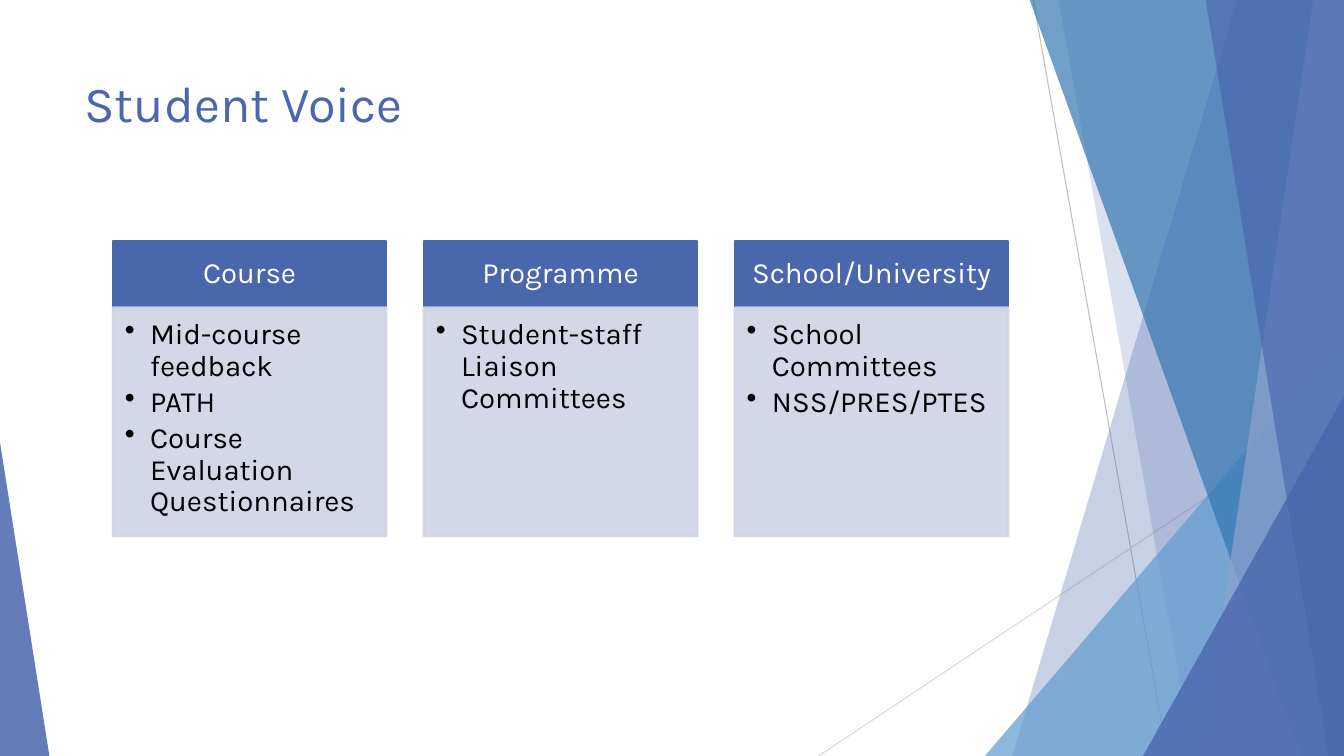
import pptx
import pptx.util
import pptx.dml.color
import pptx.enum.shapes
import pptx.enum.text
import pptx.oxml
import pptx.oxml.ns

Pt = pptx.util.Pt
RGBColor = pptx.dml.color.RGBColor
MSO_SHAPE = pptx.enum.shapes.MSO_SHAPE
PP_ALIGN = pptx.enum.text.PP_ALIGN
MSO_ANCHOR = pptx.enum.text.MSO_ANCHOR

BLUE = RGBColor(0x4A, 0x66, 0xAC)
SKY = RGBColor(0x62, 0x9D, 0xD1)
OCEAN = RGBColor(0x34, 0x77, 0xB2)
LAVENDER = RGBColor(0x90, 0xA2, 0xCF)
PANEL = RGBColor(0xD0, 0xD3, 0xE3)
GREY = RGBColor(0xBF, 0xBF, 0xBF)
PALE_GREY = RGBColor(0xD9, 0xD9, 0xD9)
WHITE = RGBColor(0xFF, 0xFF, 0xFF)
BLACK = RGBColor(0, 0, 0)

TITLE = "Student Voice"
CARDS = [
    ("Course", ["Mid-course feedback", "PATH", "Course Evaluation Questionnaires"]),
    ("Programme", ["Student-staff Liaison Committees"]),
    ("School/University", ["School Committees", "NSS/PRES/PTES"]),
]

WIDTH, HEIGHT, BAND_TOP = 960, 540, -0.7
HAIRLINES = [((738, 0), (834, HEIGHT), GREY), ((WIDTH, 290), (584.7, HEIGHT), PALE_GREY)]
DECORATION = [
    ("band", (884, 723), BLUE, 30),
    ("band", (756, 852), BLUE, 20),
    ("triangle", (703.5, 240, 256.5, 1), SKY, 72),
    ("band", (735.3, 929.5), OCEAN, 70),
    ("band", (938.2, 858.3), LAVENDER, 70),
    ("band", (861.1, 949), BLUE, 65),
    ("triangle", (816.5, 283, 143.5, 1), BLUE, 80),
    ("triangle", (0, 316, 35.3, 0), BLUE, 85),
]

FONT = "Karla"
CARD_LEFT, CARD_PITCH, CARD_WIDTH = 80.6, 222.1, 195.4
HEADER_TOP, HEADER_HEIGHT, BODY_HEIGHT = 172.1, 47.5, 163.4
HEADER_FORMAT = {"alignment": PP_ALIGN.CENTER, "line_spacing": 0.9}
BULLET_FORMAT = {"alignment": PP_ALIGN.LEFT, "line_spacing": 0.9, "space_after": Pt(3)}


def set_attributes(target, values):
    for name, value in values.items():
        setattr(target, name, value)


def set_opacity(color_format_owner, percent):
    for color in color_format_owner.iter(pptx.oxml.ns.qn("a:srgbClr")):
        alpha = color.makeelement(pptx.oxml.ns.qn("a:alpha"), {"val": str(percent * 1000)})
        color.append(alpha)


def paint(shape, color, opacity=100, outline=0):
    shape.shadow.inherit = False
    shape.fill.solid()
    shape.fill.fore_color.rgb = color
    if outline:
        shape.line.color.rgb = color
        shape.line.width = Pt(outline)
    else:
        shape.line.fill.background()
    if opacity < 100:
        set_opacity(shape.element.spPr, opacity)


def add_hairline(slide, start, end, color):
    line = slide.shapes.add_connector(
        pptx.enum.shapes.MSO_CONNECTOR.STRAIGHT, *[Pt(value) for value in start + end])
    line.line.color.rgb = color
    line.line.width = Pt(0.75)
    properties = line.element.spPr
    properties.append(properties.makeelement(pptx.oxml.ns.qn("a:effectLst"), {}))


def add_band(slide, top_x, bottom_x):
    corners = [(WIDTH, BAND_TOP), (WIDTH, HEIGHT), (bottom_x, HEIGHT)]
    builder = slide.shapes.build_freeform(Pt(top_x), Pt(BAND_TOP))
    builder.add_line_segments([(Pt(x), Pt(y)) for x, y in corners], close=True)
    return builder.convert_to_shape()


def add_triangle(slide, left, top, width, apex):
    triangle = slide.shapes.add_shape(
        MSO_SHAPE.ISOSCELES_TRIANGLE, Pt(left), Pt(top), Pt(width), Pt(HEIGHT - top))
    triangle.adjustments[0] = apex
    return triangle


def write(frame, lines, size, color, paragraph_format, bulleted=False):
    for index, text in enumerate(lines):
        paragraph = frame.add_paragraph() if index else frame.paragraphs[0]
        run = paragraph.add_run()
        run.text = text
        set_attributes(run.font, {"name": FONT, "size": Pt(size)})
        run.font.color.rgb = color
        set_attributes(paragraph, paragraph_format)
        if bulleted:
            properties = paragraph._p.get_or_add_pPr()
            properties.set("marL", str(Pt(18)))
            properties.set("indent", str(Pt(-18)))
            bullet = properties.makeelement(pptx.oxml.ns.qn("a:buChar"), {"char": "•"})
            properties.append(bullet)


def add_panel(slide, left, top, height, color, opacity, anchor, margins):
    panel = slide.shapes.add_shape(
        MSO_SHAPE.RECTANGLE, Pt(left), Pt(top), Pt(CARD_WIDTH), Pt(height))
    paint(panel, color, opacity, outline=1.5)
    sides = ("margin_left", "margin_top", "margin_right", "margin_bottom")
    frame = panel.text_frame
    set_attributes(frame, dict(zip(sides, map(Pt, margins))))
    set_attributes(frame, {"word_wrap": True, "vertical_anchor": anchor})
    return frame


def main():
    presentation = pptx.Presentation()
    set_attributes(presentation, {"slide_width": Pt(WIDTH), "slide_height": Pt(HEIGHT)})
    slide = presentation.slides.add_slide(presentation.slide_layouts[6])

    for start, end, color in HAIRLINES:
        add_hairline(slide, start, end, color)
    builders = {"band": add_band, "triangle": add_triangle}
    for kind, geometry, color, opacity in DECORATION:
        paint(builders[kind](slide, *geometry), color, opacity)

    title = slide.shapes.add_textbox(Pt(53.3), Pt(48.2), Pt(676.8), Pt(103.7))
    title.text_frame.word_wrap = True
    write(title.text_frame, [TITLE], 36, BLUE, {"alignment": PP_ALIGN.LEFT})

    for index, (heading, points) in enumerate(CARDS):
        left = CARD_LEFT + index * CARD_PITCH
        header = add_panel(slide, left, HEADER_TOP, HEADER_HEIGHT, BLUE, 100,
                           MSO_ANCHOR.MIDDLE, (11.5, 6.5, 11.5, 6.5))
        write(header, [heading], 21, WHITE, HEADER_FORMAT)
        body = add_panel(slide, left, HEADER_TOP + HEADER_HEIGHT, BODY_HEIGHT, PANEL, 90,
                         MSO_ANCHOR.TOP, (8.6, 8.6, 11.5, 13))
        write(body, points, 21, BLACK, BULLET_FORMAT, bulleted=True)

    presentation.save("out.pptx")


if __name__ == "__main__":
    main()
